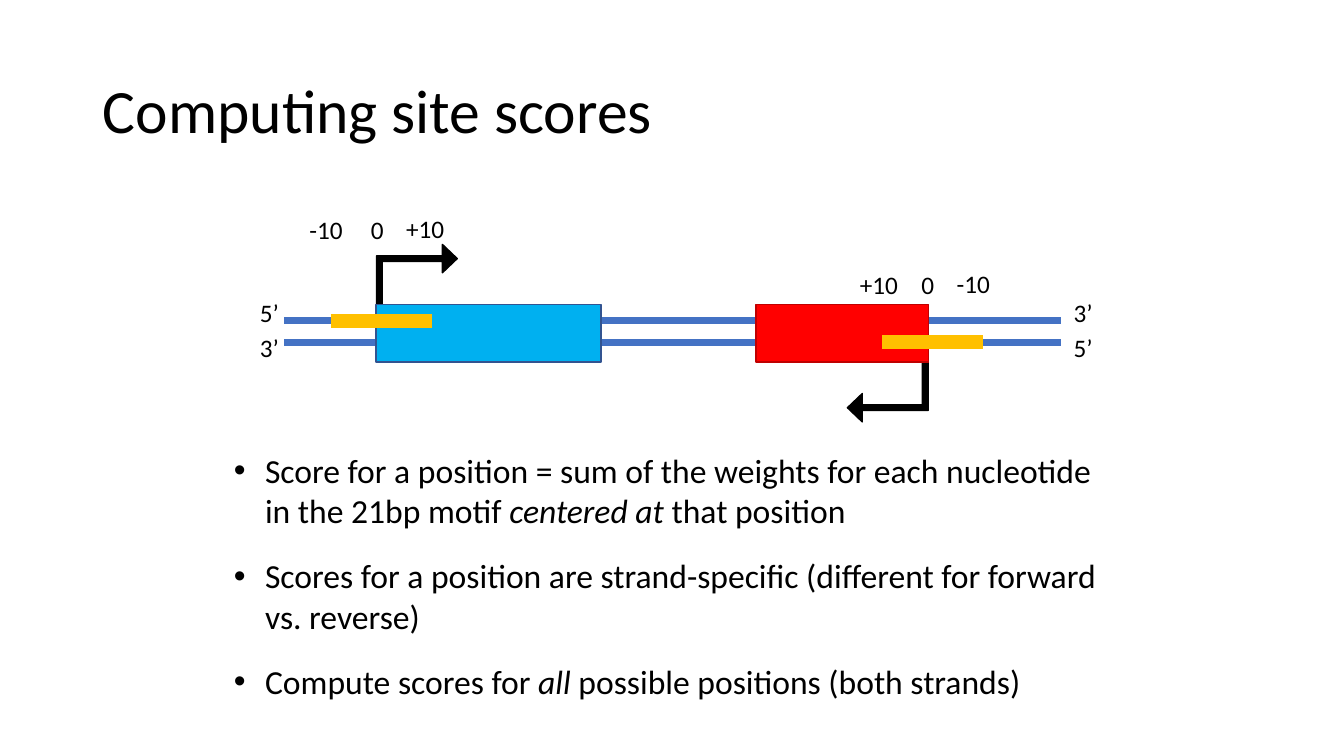
"""Build a slide that explains how site scores are computed on both strands."""
from dataclasses import dataclass

from lxml.etree import SubElement
from pptx import Presentation
from pptx.dml.color import RGBColor
from pptx.enum.shapes import MSO_CONNECTOR, MSO_SHAPE
from pptx.enum.text import MSO_ANCHOR as Anchor, MSO_AUTO_SIZE as AutoSize, PP_ALIGN as Align
from pptx.oxml.ns import qn
from pptx.util import Inches, Pt

FONT = "Calibri"
BLACK, STRAND_BLUE, MOTIF_GOLD = "000000", "4472C4", "FFC000"
LABEL_HEIGHT = 0.4


@dataclass(frozen=True)
class Label:
    text: str
    left: float
    top: float
    width: float = 0.6


@dataclass(frozen=True)
class Stretch:
    """A horizontal length of DNA."""
    left: float
    right: float
    y: float
    color: str
    weight: float


@dataclass(frozen=True)
class Block:
    """A filled shape, either a gene or its direction arrow."""
    kind: MSO_SHAPE
    left: float
    top: float
    width: float
    height: float
    fill: str
    outline: str
    rotation: float = 0


STRANDS = [Stretch(2.82, 10.52, y, STRAND_BLUE, 5) for y in (3.18, 3.4)]
MOTIFS = [Stretch(left, left + 1, y, MOTIF_GOLD, 10) for left, y in ((3.28, 3.18), (8.75, 3.39))]
ARROWS = [
    Block(MSO_SHAPE.BENT_UP_ARROW, left, top, 0.59, 0.8, BLACK, BLACK, rotation)
    for left, top, rotation in ((3.84, 2.32, 270), (8.51, 3.49, 90))
]
GENES = [
    Block(MSO_SHAPE.RECTANGLE, 3.73, 3.02, 2.23, 0.57, "00B0F0", "325491"),
    Block(MSO_SHAPE.RECTANGLE, 7.5, 3.02, 1.71, 0.57, "FF0000", "C00000"),
]
OFFSETS = [
    Label("-10", 2.97, 2.08), Label("0", 3.58, 2.08, 0.32), Label("+10", 3.93, 2.07),
    Label("+10", 8.43, 2.62), Label("0", 9.04, 2.62, 0.32), Label("-10", 9.39, 2.61),
]
STRAND_ENDS = [
    Label(text, left, top)
    for left, pair in ((2.48, ("5’", "3’")), (10.55, ("3’", "5’")))
    for text, top in zip(pair, (2.9, 3.25))
]
POINTS = [
    [("Score for a position = sum of the weights for each nucleotide in the 21bp motif ", False),
     ("centered at", True), (" that position", False)],
    [("Scores for a position are strand-specific (different for forward vs. reverse)", False)],
    [("Compute scores for ", False), ("all ", True), ("possible positions (both strands)", False)],
]


def rgb(color: str) -> RGBColor:
    return RGBColor.from_string(color)


def write(paragraph, text: str, *, size: float = 18, italic: bool = False) -> None:
    run = paragraph.add_run()
    run.text = text
    run.font.name = FONT
    run.font.size = Pt(size)
    run.font.italic = italic
    run.font.color.rgb = rgb(BLACK)


def add_frame(slide, left: float, top: float, width: float, height: float):
    box = slide.shapes.add_textbox(Inches(left), Inches(top), Inches(width), Inches(height))
    frame = box.text_frame
    frame.word_wrap = True
    frame.auto_size = AutoSize.SHAPE_TO_FIT_TEXT
    return frame


def add_label(slide, label: Label) -> None:
    frame = add_frame(slide, label.left, label.top, label.width, LABEL_HEIGHT)
    write(frame.paragraphs[0], label.text)


def add_stretch(slide, stretch: Stretch) -> None:
    y = Inches(stretch.y)
    line = slide.shapes.add_connector(
        MSO_CONNECTOR.STRAIGHT, Inches(stretch.left), y, Inches(stretch.right), y)
    line.line.color.rgb = rgb(stretch.color)
    line.line.width = Pt(stretch.weight)
    SubElement(line._element.spPr, qn("a:effectLst"))


def add_block(slide, block: Block):
    shape = slide.shapes.add_shape(
        block.kind, Inches(block.left), Inches(block.top), Inches(block.width), Inches(block.height))
    shape.rotation = block.rotation
    shape.fill.solid()
    shape.fill.fore_color.rgb = rgb(block.fill)
    shape.line.color.rgb = rgb(block.outline)
    shape.line.width = Pt(1)
    shape.shadow.inherit = False
    return shape


def add_arrow(slide, block: Block) -> None:
    arrow = add_block(slide, block)
    for index, value in enumerate((0.095, 0.238, 0.25)):
        arrow.adjustments[index] = value
    arrow._element.spPr.find(qn("a:xfrm")).set("flipV", "1")


def add_title(slide, text: str) -> None:
    title = slide.shapes.title
    title.left, title.top, title.width, title.height = map(Inches, (0.92, 0.4, 11.5, 1.45))
    frame = title.text_frame
    frame.word_wrap = True
    frame.auto_size = AutoSize.NONE
    frame.vertical_anchor = Anchor.MIDDLE
    paragraph = frame.paragraphs[0]
    paragraph.alignment = Align.LEFT
    paragraph.line_spacing = 0.9
    write(paragraph, text, size=44)


def add_points(slide) -> None:
    frame = add_frame(slide, 2.22, 4.41, 8.91, 2.63)
    for index, point in enumerate(POINTS):
        paragraph = frame.add_paragraph() if index else frame.paragraphs[0]
        paragraph.space_before = Pt(18)
        properties = paragraph._p.get_or_add_pPr()
        properties.set("marL", str(Inches(0.31)))
        properties.set("indent", str(-Inches(0.31)))
        SubElement(properties, qn("a:buFont"), typeface="Arial")
        SubElement(properties, qn("a:buChar"), char="•")
        for text, italic in point:
            write(paragraph, text, size=24, italic=italic)


def main() -> None:
    deck = Presentation()
    deck.slide_width, deck.slide_height = Inches(13.33), Inches(7.5)
    slide = deck.slides.add_slide(deck.slide_layouts[5])
    add_title(slide, "Computing site scores")
    for draw, parts in (
        (add_stretch, STRANDS), (add_arrow, ARROWS), (add_label, OFFSETS),
        (add_block, GENES), (add_label, STRAND_ENDS), (add_stretch, MOTIFS),
    ):
        for part in parts:
            draw(slide, part)
    add_points(slide)
    deck.save("out.pptx")


if __name__ == "__main__":
    main()
